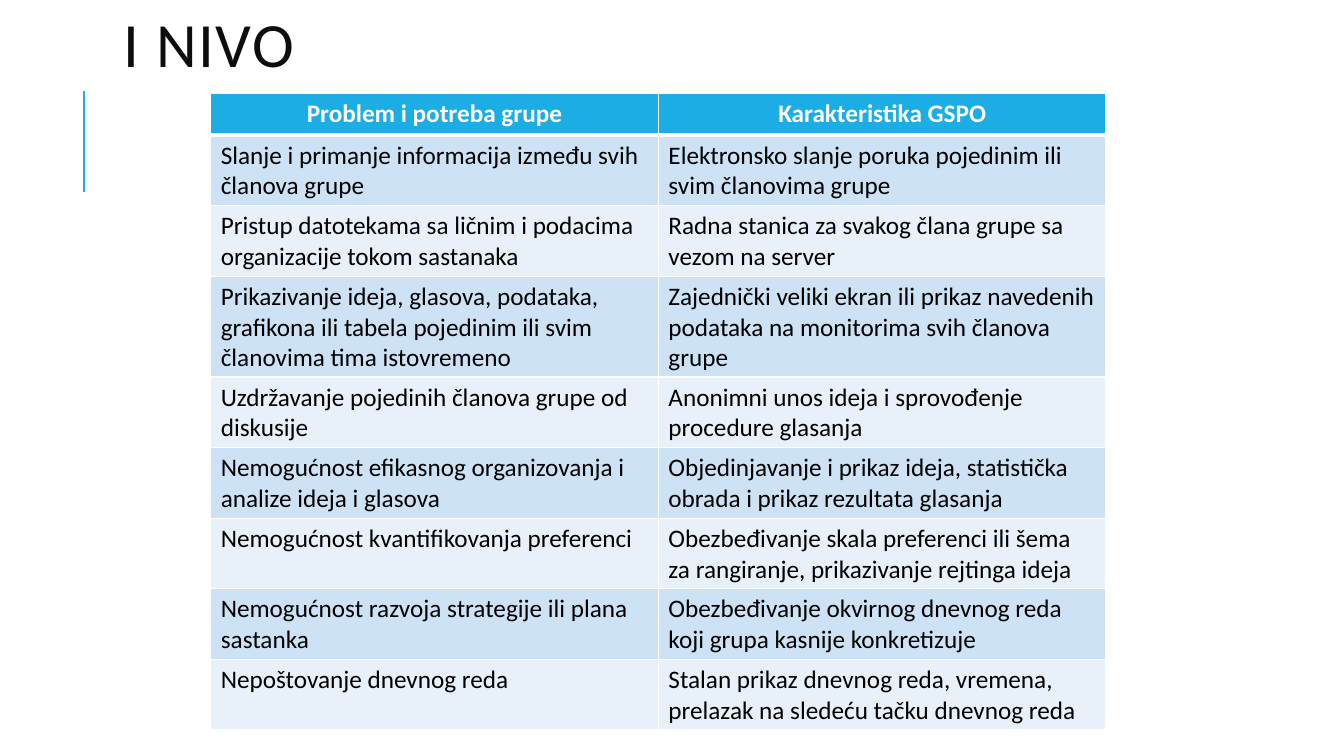
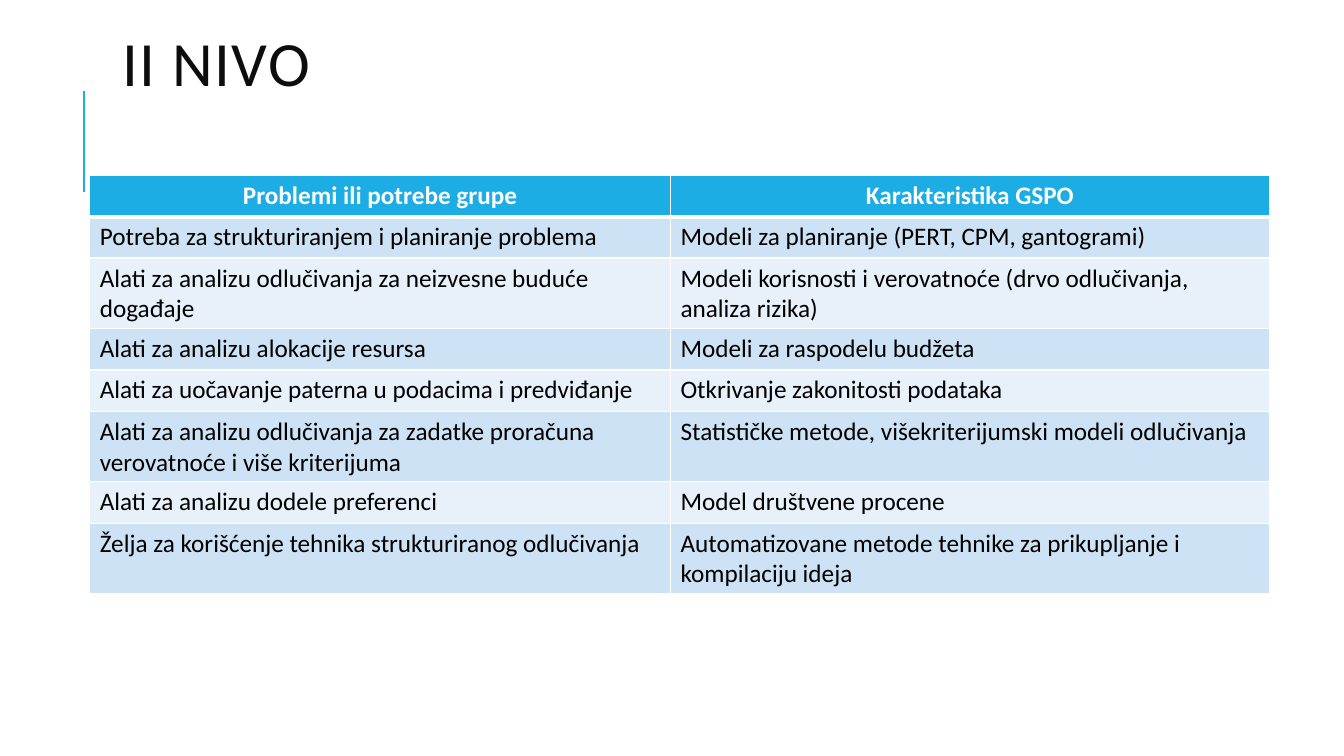
from lxml.etree import SubElement
from pptx import Presentation
from pptx.dml.color import RGBColor
from pptx.enum.shapes import MSO_CONNECTOR
from pptx.enum.text import MSO_ANCHOR, PP_ALIGN
from pptx.oxml import parse_xml
from pptx.oxml.ns import nsdecls, qn
from pptx.util import Inches, Pt

ACCENT, INK, BLACK, WHITE = "1CADE4", "0D0D0D", "000000", "FFFFFF"
BANDS = ["E8F1FA", "CDE3F5"]
ROW_HEIGHT = 0.41
TITLE_FONT = {"name": "Calibri", "size": Pt(45)}
HEADER_FONT = {"name": "Calibri", "size": Pt(18), "bold": True}
BODY_FONT = {"name": "Calibri", "size": Pt(18), "bold": False}

LEVELS = [
    {
        "title": "I NIVO",
        "title_box": (1.13, 0.14, 10.63, 0.69),
        "corner": (2.09, 0.93),
        "columns": (4.44, 4.44),
        "rows": [
            ("Problem i potreba grupe", "Karakteristika GSPO"),
            ("Slanje i primanje informacija između svih članova grupe",
             "Elektronsko slanje poruka pojedinim ili svim članovima grupe"),
            ("Pristup datotekama sa ličnim i podacima organizacije tokom sastanaka",
             "Radna stanica za svakog člana grupe sa vezom na server"),
            ("Prikazivanje ideja, glasova, podataka, grafikona ili tabela pojedinim "
             "ili svim članovima tima istovremeno",
             "Zajednički veliki ekran ili prikaz navedenih podataka na monitorima "
             "svih članova grupe"),
            ("Uzdržavanje pojedinih članova grupe od diskusije",
             "Anonimni unos ideja i sprovođenje procedure glasanja"),
            ("Nemogućnost efikasnog organizovanja i analize ideja i glasova",
             "Objedinjavanje i prikaz ideja, statistička obrada i prikaz rezultata glasanja"),
            ("Nemogućnost kvantifikovanja preferenci",
             "Obezbeđivanje skala preferenci ili šema za rangiranje, prikazivanje "
             "rejtinga ideja"),
            ("Nemogućnost razvoja strategije ili plana sastanka",
             "Obezbeđivanje okvirnog dnevnog reda koji grupa kasnije konkretizuje"),
            ("Nepoštovanje dnevnog reda",
             "Stalan prikaz dnevnog reda, vremena, prelazak na sledeću tačku dnevnog reda"),
        ],
    },
    {
        "title": "II NIVO",
        "title_box": (1.12, 0.31, 10.63, 0.74),
        "corner": (0.89, 1.74),
        "columns": (5.76, 5.94),
        "rows": [
            ("Problemi ili potrebe grupe", "Karakteristika GSPO"),
            ("Potreba za strukturiranjem i planiranje problema",
             "Modeli za planiranje (PERT, CPM, gantogrami)"),
            ("Alati za analizu odlučivanja za neizvesne buduće događaje",
             "Modeli korisnosti i verovatnoće (drvo odlučivanja, analiza rizika)"),
            ("Alati za analizu alokacije resursa", "Modeli za raspodelu budžeta"),
            ("Alati za uočavanje paterna u podacima i predviđanje",
             "Otkrivanje zakonitosti podataka"),
            ("Alati za analizu odlučivanja za zadatke proračuna verovatnoće i više kriterijuma",
             "Statističke metode, višekriterijumski modeli odlučivanja"),
            ("Alati za analizu dodele preferenci", "Model društvene procene"),
            ("Želja za korišćenje tehnika strukturiranog odlučivanja",
             "Automatizovane metode tehnike za prikupljanje i kompilaciju ideja"),
        ],
    },
]


def rgb(color):
    return RGBColor.from_string(color)


def write(paragraph, text, color, font_format):
    run = paragraph.add_run()
    run.text = text
    run.font.color.rgb = rgb(color)
    for attribute, value in font_format.items():
        setattr(run.font, attribute, value)
    return run


prs = Presentation()
prs.slide_width, prs.slide_height = Inches(13.33), Inches(7.5)

for level in LEVELS:
    slide = prs.slides.add_slide(prs.slide_layouts[6])

    accent_rule = slide.shapes.add_connector(
        MSO_CONNECTOR.STRAIGHT, Inches(0.83), Inches(1.9), Inches(0.83), Inches(0.9))
    accent_rule.line.color.rgb = rgb(ACCENT)
    accent_rule.line.width = Pt(1.5)
    SubElement(accent_rule.element.spPr, qn("a:effectLst"))

    title = slide.shapes.add_textbox(*map(Inches, level["title_box"])).text_frame
    title.word_wrap = True
    title.vertical_anchor = MSO_ANCHOR.MIDDLE
    title.paragraphs[0].line_spacing = 0.8
    title_run = write(title.paragraphs[0], level["title"], INK, TITLE_FONT)
    title_run.font._element.set("spc", "100")

    rows, columns = level["rows"], level["columns"]
    size = (sum(columns), ROW_HEIGHT * len(rows))
    needs = slide.shapes.add_table(
        len(rows), len(columns), *map(Inches, level["corner"] + size)).table
    for column, width in zip(needs.columns, columns):
        column.width = Inches(width)

    for r, row in enumerate(rows):
        header = r == 0
        edges = {"lnL": 1, "lnR": 1, "lnT": 3 if r == 1 else 1, "lnB": 3 if header else 1}
        for c, text in enumerate(row):
            cell = needs.cell(r, c)
            cell.fill.solid()
            cell.fill.fore_color.rgb = rgb(ACCENT if header else BANDS[r % 2])
            for position, (edge, points) in enumerate(edges.items()):
                cell._tc.tcPr.insert(position, parse_xml(
                    f'<a:{edge} {nsdecls("a")} w="{Pt(points)}"><a:solidFill>'
                    f'<a:srgbClr val="{WHITE}"/></a:solidFill></a:{edge}>'))
            paragraph = cell.text_frame.paragraphs[0]
            paragraph.alignment = PP_ALIGN.CENTER if header else PP_ALIGN.LEFT
            write(paragraph, text, WHITE if header else BLACK,
                  HEADER_FONT if header else BODY_FONT)

prs.save("out.pptx")
